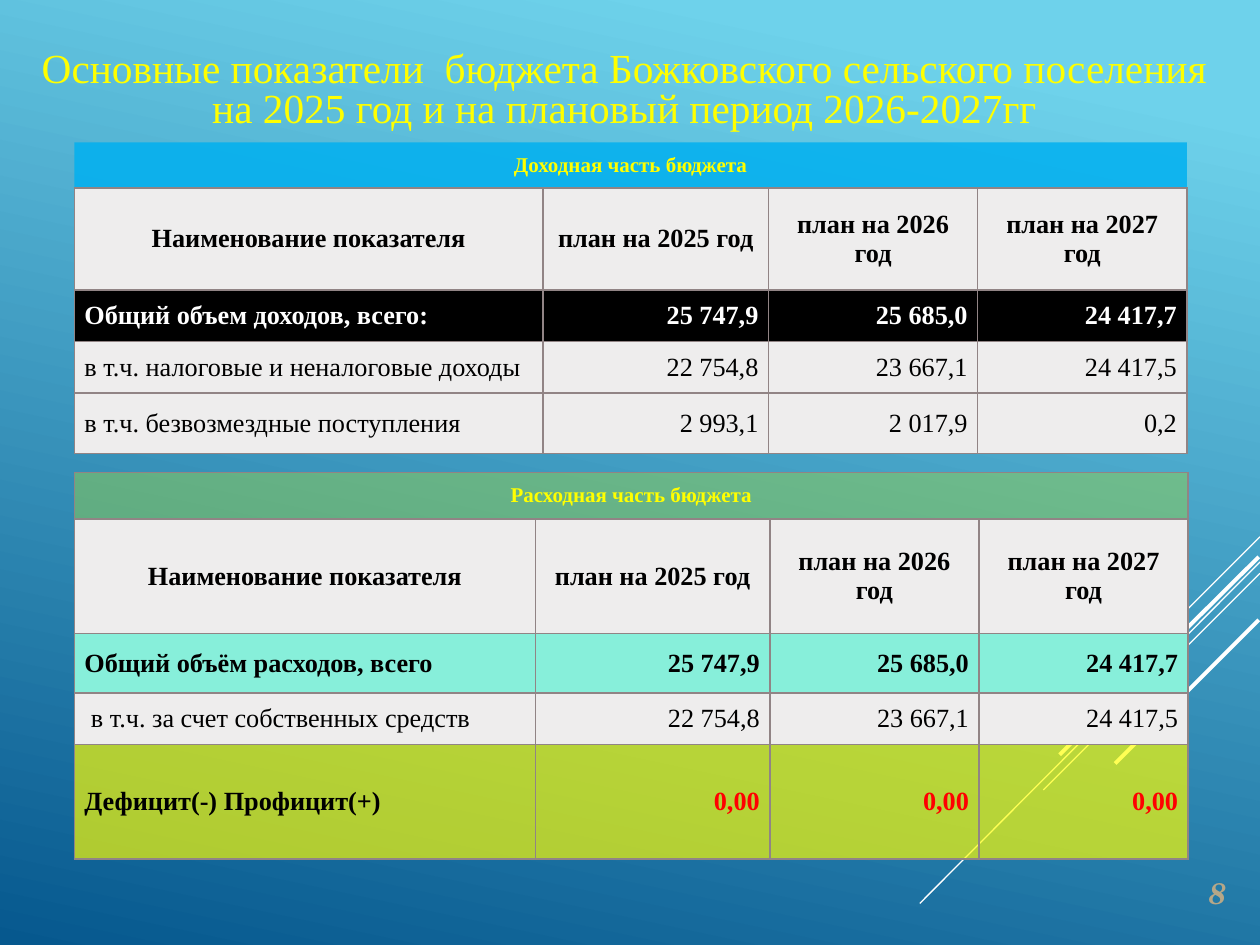
import pptx
import pptx.dml.color
import pptx.enum.shapes
import pptx.enum.text
import pptx.oxml
import pptx.oxml.ns
import pptx.util
from lxml import etree

Inches = pptx.util.Inches
Pt = pptx.util.Pt
ALIGN = pptx.enum.text.PP_ALIGN
ANCHOR = pptx.enum.text.MSO_ANCHOR
qn = pptx.oxml.ns.qn

COLORS = {
    "sky": "6ED2EB", "deep": "06588E", "white": "FFFFFF", "black": "000000",
    "yellow": "FFFF00", "red": "FF0000", "number": "B5A788", "border": "918485",
    "cell": "EEEDED", "income": "00B0F0", "expense": "92D050", "mint": "87EFDA",
}
SERIF = "Times New Roman"
HEADINGS = ["Наименование показателя", "план на 2025 год",
            "план на 2026 год", "план на 2027 год"]


def rgb(name):
    return pptx.dml.color.RGBColor.from_string(COLORS[name])


def set_values(target, values):
    for name, value in values.items():
        setattr(target, name, value)


def write(paragraph, text, color, alignment, **font):
    paragraph.alignment = alignment
    run = paragraph.add_run()
    run.text = text
    set_values(run.font, {"name": SERIF, **font})
    run.font.color.rgb = rgb(color)


def set_background(slide):
    fill = slide.background.fill
    fill.gradient()
    fill.gradient_angle = 258
    for stop, (position, color) in zip(fill.gradient_stops, [(0.1, "sky"), (1, "deep")]):
        stop.position = position
        stop.color.rgb = rgb(color)


def add_rays(slide):
    rays = [(10, 4.26, 9.17, 5.09, 0.75), (10, 4.46, 7.3, 7.17, 0.75),
            (10, 4.55, 8.28, 6.27, 0.75), (9.99, 4.42, 8.41, 5.99, 2.25),
            (9.99, 4.92, 8.85, 6.06, 2.25)]
    for *ends, width in rays:
        ray = slide.shapes.add_connector(
            pptx.enum.shapes.MSO_CONNECTOR.STRAIGHT, *map(Inches, ends))
        ray.line.color.rgb = rgb("white")
        ray.line.width = Pt(width)
        etree.SubElement(ray._element.spPr, qn("a:effectLst"))


def add_title(slide, box, lines):
    title = slide.shapes.title
    set_values(title, dict(zip(("left", "top", "width", "height"), map(Inches, box))))
    frame = title.text_frame
    set_values(frame, {"word_wrap": True, "vertical_anchor": ANCHOR.MIDDLE,
                       "auto_size": pptx.enum.text.MSO_AUTO_SIZE.NONE})
    for index, line in enumerate(lines):
        paragraph = frame.add_paragraph() if index else frame.paragraphs[0]
        write(paragraph, line, "yellow", ALIGN.CENTER, size=Pt(23.6), bold=False)
        set_values(paragraph, {"line_spacing": 0.8, "space_before": Pt(0)})
        properties = paragraph._p.get_or_add_pPr()
        properties.set("marL", str(Inches(0.48)))
        properties.set("indent", str(Inches(-0.48)))


def add_page_number(slide, box, number):
    frame = slide.shapes.add_textbox(*map(Inches, box)).text_frame
    set_values(frame, {"word_wrap": True, "vertical_anchor": ANCHOR.BOTTOM})
    paragraph = frame.paragraphs[0]
    write(paragraph, number, "number", ALIGN.RIGHT, name="TeX Gyre Schola",
          size=Pt(17), bold=True, italic=True)
    paragraph.line_spacing = 0.9


def format_cell(cell, color, alpha, sides):
    set_values(cell, {"vertical_anchor": ANCHOR.MIDDLE,
                      **{f"margin_{side}": Inches(0.08)
                         for side in ("left", "right", "top", "bottom")}})
    cell.fill.solid()
    cell.fill.fore_color.rgb = rgb(color)
    properties = cell._tc.get_or_add_tcPr()
    if alpha < 100:
        fill_color = properties.find(".//" + qn("a:srgbClr"))
        etree.SubElement(fill_color, qn("a:alpha"), val=str(alpha * 1000))
    for index, side in enumerate("LRTB"):
        line = pptx.oxml.parse_xml(
            f'<a:ln{side} {pptx.oxml.ns.nsdecls("a")} w="{Pt(1)}"/>')
        if side in sides:
            solid = etree.SubElement(line, qn("a:solidFill"))
            etree.SubElement(solid, qn("a:srgbClr"), val=COLORS["border"])
        else:
            etree.SubElement(line, qn("a:noFill"))
        properties.insert(index, line)


def add_budget_table(slide, box, columns, heights, caption, body):
    rows = [{"texts": [caption["text"]] + [""] * 3, **caption},
            {"texts": HEADINGS, "bold": True, "centered": True}] + body
    shape = slide.shapes.add_table(len(rows), len(columns), *map(Inches, box))
    table = shape.table
    set_values(table, {"first_row": False, "horz_banding": False})
    for column, width in zip(table.columns, columns):
        column.width = Inches(width)
    for row, height in zip(table.rows, heights):
        row.height = Inches(height)
    table.cell(0, 0).merge(table.cell(0, len(columns) - 1))
    for row_index, row in enumerate(rows):
        for column_index, text in enumerate(row["texts"]):
            cell = table.cell(row_index, column_index)
            format_cell(cell, row.get("fill", "cell"), row.get("alpha", 100),
                        row.get("sides", "LRTB"))
            if not text:
                continue
            color = row.get("color", "black")
            alignment = ALIGN.LEFT
            if row.get("centered"):
                alignment = ALIGN.CENTER
            elif column_index:
                alignment = ALIGN.RIGHT
                color = row.get("value_color", color)
            write(cell.text_frame.paragraphs[0], text, color, alignment,
                  size=Pt(row.get("size", 15)), bold=row.get("bold", False))


def main():
    presentation = pptx.Presentation()
    set_values(presentation, {"slide_width": Inches(10), "slide_height": Inches(7.5)})
    slide = presentation.slides.add_slide(presentation.slide_layouts[5])
    set_background(slide)
    add_rays(slide)
    add_page_number(slide, (9.33, 6.89, 0.5, 0.39), "8")
    add_title(slide, (0, 0.3, 10, 0.85),
              ["Основные показатели  бюджета Божковского сельского поселения ",
               "на 2025 год и на плановый период 2026-2027гг "])
    caption = {"color": "yellow", "size": 12, "bold": True, "centered": True}
    totals = ["25 747,9", "25 685,0", "24 417,7"]
    own_funds = ["22 754,8", "23 667,1", "24 417,5"]
    add_budget_table(
        slide, (0.59, 1.13, 8.83, 2.44), [3.72, 1.79, 1.66, 1.66],
        [0.35, 0.81, 0.4, 0.4, 0.48],
        {**caption, "text": "Доходная часть бюджета", "fill": "income",
         "alpha": 84, "sides": "B"},
        [{"texts": ["Общий объем доходов, всего:"] + totals, "fill": "black",
          "color": "white", "bold": True},
         {"texts": ["в т.ч. налоговые и неналоговые доходы"] + own_funds},
         {"texts": ["в т.ч. безвозмездные поступления", "2 993,1", "2 017,9", "0,2"]}])
    add_budget_table(
        slide, (0.59, 3.75, 8.83, 3.07), [3.66, 1.86, 1.66, 1.66],
        [0.37, 0.91, 0.47, 0.41, 0.91],
        {**caption, "text": "Расходная часть бюджета", "fill": "expense", "alpha": 50},
        [{"texts": ["Общий объём расходов, всего"] + totals, "fill": "mint", "bold": True},
         {"texts": [" в т.ч. за счет собственных средств"] + own_funds},
         {"texts": ["Дефицит(-) Профицит(+)"] + ["0,00"] * 3, "fill": "yellow",
          "alpha": 67, "bold": True, "value_color": "red"}])
    presentation.save("out.pptx")


if __name__ == "__main__":
    main()
